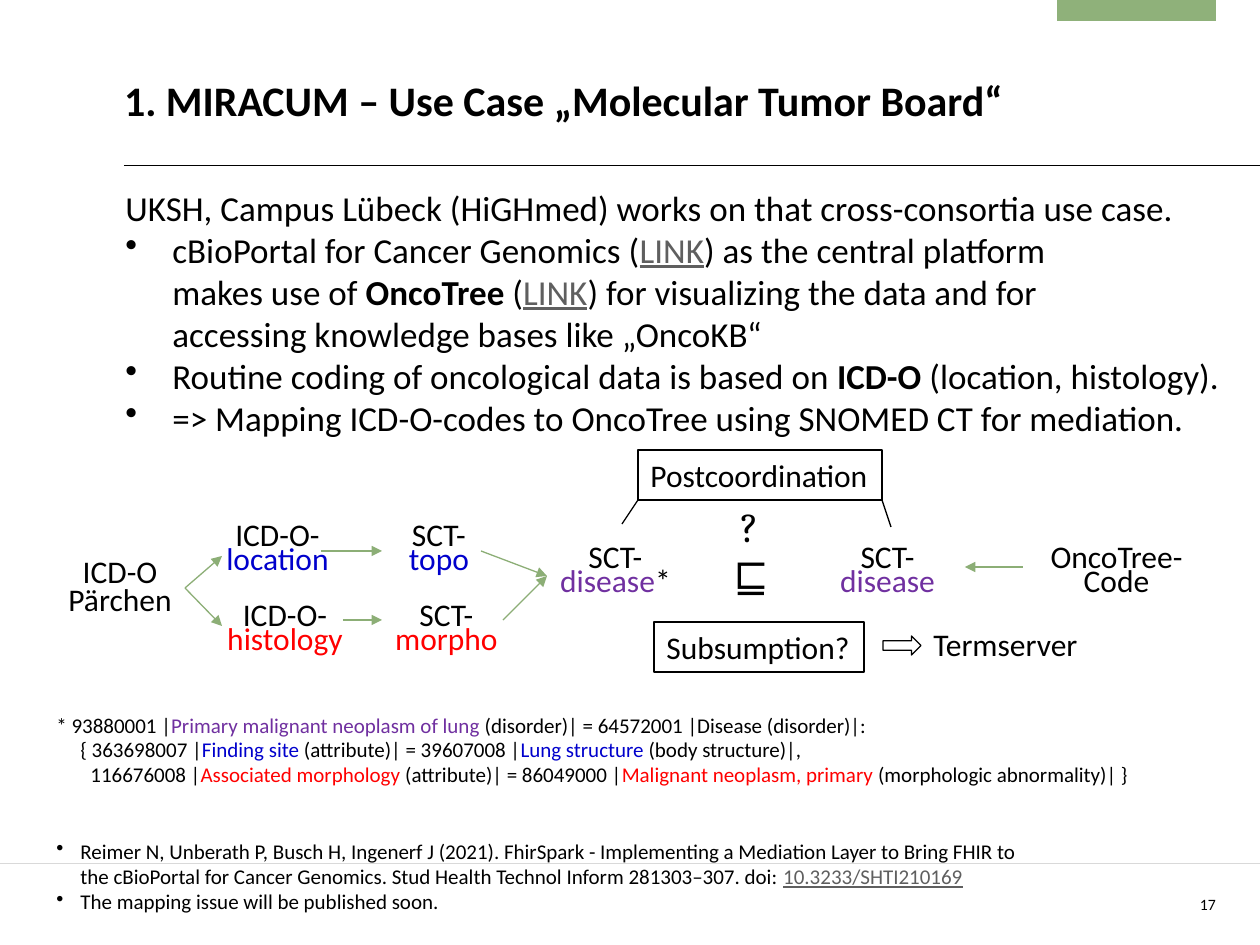
from lxml import etree
from pptx import Presentation
from pptx.dml.color import RGBColor
from pptx.enum.shapes import MSO_CONNECTOR, MSO_SHAPE
from pptx.enum.text import MSO_ANCHOR, MSO_AUTO_SIZE, PP_ALIGN
from pptx.oxml.ns import qn
from pptx.util import Pt

EMU_PER_PX = 914400 / 126

BLACK = RGBColor(0x00, 0x00, 0x00)
WHITE = RGBColor(0xFF, 0xFF, 0xFF)
GREY = RGBColor(0x5F, 0x5F, 0x5F)
RULE_GREY = RGBColor(0xD9, 0xD9, 0xD9)
GREEN = RGBColor(0x8F, 0xB1, 0x7A)
ARROW_GREEN = RGBColor(0x8C, 0xAE, 0x76)
BLUE = RGBColor(0x00, 0x00, 0xCC)
RED = RGBColor(0xFF, 0x00, 0x00)
PURPLE = RGBColor(0x70, 0x30, 0xA0)

LEFT, CENTER, RIGHT = PP_ALIGN.LEFT, PP_ALIGN.CENTER, PP_ALIGN.RIGHT
TOP, BOTTOM = MSO_ANCHOR.TOP, MSO_ANCHOR.BOTTOM
FIT, FIXED = MSO_AUTO_SIZE.SHAPE_TO_FIT_TEXT, MSO_AUTO_SIZE.NONE
STRAIGHT = MSO_CONNECTOR.STRAIGHT
RECT, RIGHT_ARROW = MSO_SHAPE.RECTANGLE, MSO_SHAPE.RIGHT_ARROW

BOLD = {"bold": True}
LINK = {"color": GREY, "underline": True}


def px(length):
    return round(length * EMU_PER_PX)


def add_shape(slide, kind, box, fill=None, line=None):
    shape = slide.shapes.add_shape(kind, *map(px, box))
    shape.shadow.inherit = False
    if fill is None:
        shape.fill.background()
    else:
        shape.fill.solid()
        shape.fill.fore_color.rgb = fill
    if line is None:
        shape.line.fill.background()
    else:
        shape.line.color.rgb = line
        shape.line.width = Pt(0.75)
    return shape


def add_line(slide, start, end, color=BLACK, width=0.75, arrow=False):
    line = slide.shapes.add_connector(STRAIGHT, *map(px, (*start, *end)))
    line.line.color.rgb = color
    line.line.width = Pt(width)
    if arrow:
        etree.SubElement(line.line._get_or_add_ln(), qn("a:tailEnd"), type="triangle")
    etree.SubElement(line._element.spPr, qn("a:effectLst"))


def indent(paragraph, margin, bullet):
    properties = paragraph._p.get_or_add_pPr()
    properties.set("marL", str(px(margin)))
    if bullet:
        properties.set("indent", str(-px(margin)))
        etree.SubElement(properties, qn("a:buChar"), char="•")


def add_text(slide, box, paragraphs, size=18, font="Calibri", align=LEFT,
             spacing=None, margins=(), bullets=False, bold=False, anchor=TOP,
             inset=None, wrap=False, fit=FIT, outline=False):
    """Write paragraphs, each a list of strings or (string, run format) pairs.

    A newline is a line break; margins holds one left margin per paragraph.
    """
    if outline:
        shape = add_shape(slide, RECT, box, line=BLACK)
    else:
        shape = slide.shapes.add_textbox(*map(px, box))
    frame = shape.text_frame
    frame.word_wrap, frame.auto_size, frame.vertical_anchor = wrap, fit, anchor
    if inset:
        (frame.margin_left, frame.margin_top,
         frame.margin_right, frame.margin_bottom) = map(px, inset)
    for index, runs in enumerate(paragraphs):
        paragraph = frame.add_paragraph() if index else frame.paragraphs[0]
        if margins and margins[index]:
            indent(paragraph, margins[index], bullets)
        paragraph.alignment = align
        if spacing:
            paragraph.line_spacing = Pt(spacing)
        for part in runs:
            text, style = (part, {}) if isinstance(part, str) else part
            for number, piece in enumerate(text.split("\n")):
                if number:
                    paragraph.add_line_break()
                if not piece:
                    continue
                run = paragraph.add_run()
                run.text = piece
                run.font.size, run.font.name = Pt(size), font
                run.font.bold = style.get("bold", bold)
                run.font.underline = style.get("underline", False)
                run.font.color.rgb = style.get("color", BLACK)


def ink(text, color):
    return text, {"color": color}


def draw_header(slide, left, top, width):
    add_shape(slide, RECT, (left + 933, top, 159, 21), fill=GREEN)
    add_line(slide, (left, top + 165), (left + width, top + 165), width=0.5)
    add_text(slide, (left, top + 66, 903, 59),
             [["1. MIRACUM – Use Case „Molecular Tumor Board“"]],
             size=24, bold=True, anchor=BOTTOM, inset=(0, 5, 0, 0), wrap=True, fit=FIXED)


def draw_use_case(slide, box):
    add_text(slide, box, [
        ["UKSH, Campus Lübeck (HiGHmed) works on that cross-consortia use case."],
        ["cBioPortal for Cancer Genomics (", ("LINK", LINK),
         ") as the central platform\nmakes use of ", ("OncoTree", BOLD), " (",
         ("LINK", LINK),
         ") for visualizing the data and for \naccessing knowledge bases like „OncoKB“"],
        ["Routine coding of oncological data is based on ", ("ICD-O", BOLD),
         " (location, histology)."],
        ["=> Mapping ICD-O-codes to OncoTree using SNOMED CT for mediation."],
    ], size=20, margins=(0, 47, 47, 47), bullets=True)


def draw_mapping(slide, left, top):
    """Draw the path from ICD-O pairs through SNOMED CT to OncoTree."""
    nodes = [
        (158, 72, 129, [["ICD-O-\n", ink("location", BLUE)]]),
        (159, 152, 142, [["ICD-O-\n", ink("histology", RED)]]),
        (341, 72, 86, [["SCT-\n", ink("topo", BLUE)]]),
        (327, 152, 129, [["SCT-\n", ink("morpho", RED)]]),
        (492, 94, 137, [["SCT-\n", ink("disease", PURPLE), "*"]]),
        (772, 94, 121, [["SCT-\n", ink("disease", PURPLE)]]),
        (982, 94, 159, [["OncoTree-"], ["Code"]]),
    ]
    add_text(slide, (left, top + 106, 130, 67), [["ICD-O"], ["Pärchen"]],
             align=CENTER, spacing=16)
    for x, y, width, label in nodes:
        add_text(slide, (left + x, top + y, width, 64), label, align=CENTER, spacing=14)

    arrows = [
        (130, 138, 167, 106), (130, 138, 167, 176),
        (266, 101, 327, 101), (288, 170, 327, 170),
        (426, 101, 492, 126), (448, 170, 492, 126),
        (968, 117, 910, 117),
    ]
    for x1, y1, x2, y2 in arrows:
        add_line(slide, (left + x1, top + y1), (left + x2, top + y2),
                 color=ARROW_GREEN, arrow=True)

    add_text(slide, (left + 666, top + 44, 57, 115), [["?"], ["⊑"]],
             size=24, font="Cambria", align=CENTER)
    add_text(slide, (left + 583, top, 244, 50), [["Postcoordination"]], outline=True)
    for x1, y1, x2, y2 in [(567, 74, 583, 50), (836, 77, 827, 50)]:
        add_line(slide, (left + x1, top + y1), (left + x2, top + y2))
    add_text(slide, (left + 599, top + 172, 210, 50), [["Subsumption?"]], outline=True)
    add_shape(slide, RIGHT_ARROW, (left + 828, top + 186, 38, 19), fill=WHITE, line=BLACK)
    add_text(slide, (left + 866, top + 169, 174, 50), [["Termserver"]], wrap=True)


def draw_expression(slide, box):
    add_text(slide, box, [
        ["* 93880001 |", ink("Primary malignant neoplasm of lung ", PURPLE),
         "(disorder)| = 64572001 |Disease (disorder)|:"],
        ["{ 363698007 |", ink("Finding site ", BLUE), "(attribute)| = 39607008 |",
         ink("Lung structure ", BLUE), "(body structure)|,"],
        ["116676008 |", ink("Associated morphology ", RED), "(attribute)| = 86049000 |",
         ink("Malignant neoplasm, primary ", RED), "(morphologic abnormality)| }"],
    ], size=12, spacing=14, margins=(0, 24, 34))


def draw_footer(slide, left, top, width):
    add_line(slide, (left, top + 31), (left + width, top + 31), color=RULE_GREY, width=0.5)
    add_text(slide, (left + 44, top, 1003, 89), [
        ["Reimer N, Unberath P, Busch H, Ingenerf J (2021). FhirSpark - Implementing a "
         "Mediation Layer to Bring FHIR to the cBioPortal for Cancer Genomics. Stud Health "
         "Technol Inform 281303–307. doi: ", ("10.3233/SHTI210169", LINK)],
        ["The mapping issue will be published soon."],
    ], size=12, margins=(24, 24), bullets=True, wrap=True)
    add_text(slide, (left + 1125, top + 58, 91, 33), [["17"]], size=9, align=RIGHT,
             inset=(0, 5, 0, 0), wrap=True, fit=FIXED)


def main():
    deck = Presentation()
    deck.slide_width, deck.slide_height = px(1260), px(945)
    slide = deck.slides.add_slide(deck.slide_layouts[6])
    draw_header(slide, 124, 0, 1136)
    draw_use_case(slide, (113, 180, 1128, 267))
    draw_mapping(slide, 55, 450)
    draw_expression(slide, (44, 707, 1143, 87))
    draw_footer(slide, 0, 832, 1260)
    deck.save("out.pptx")


if __name__ == "__main__":
    main()
